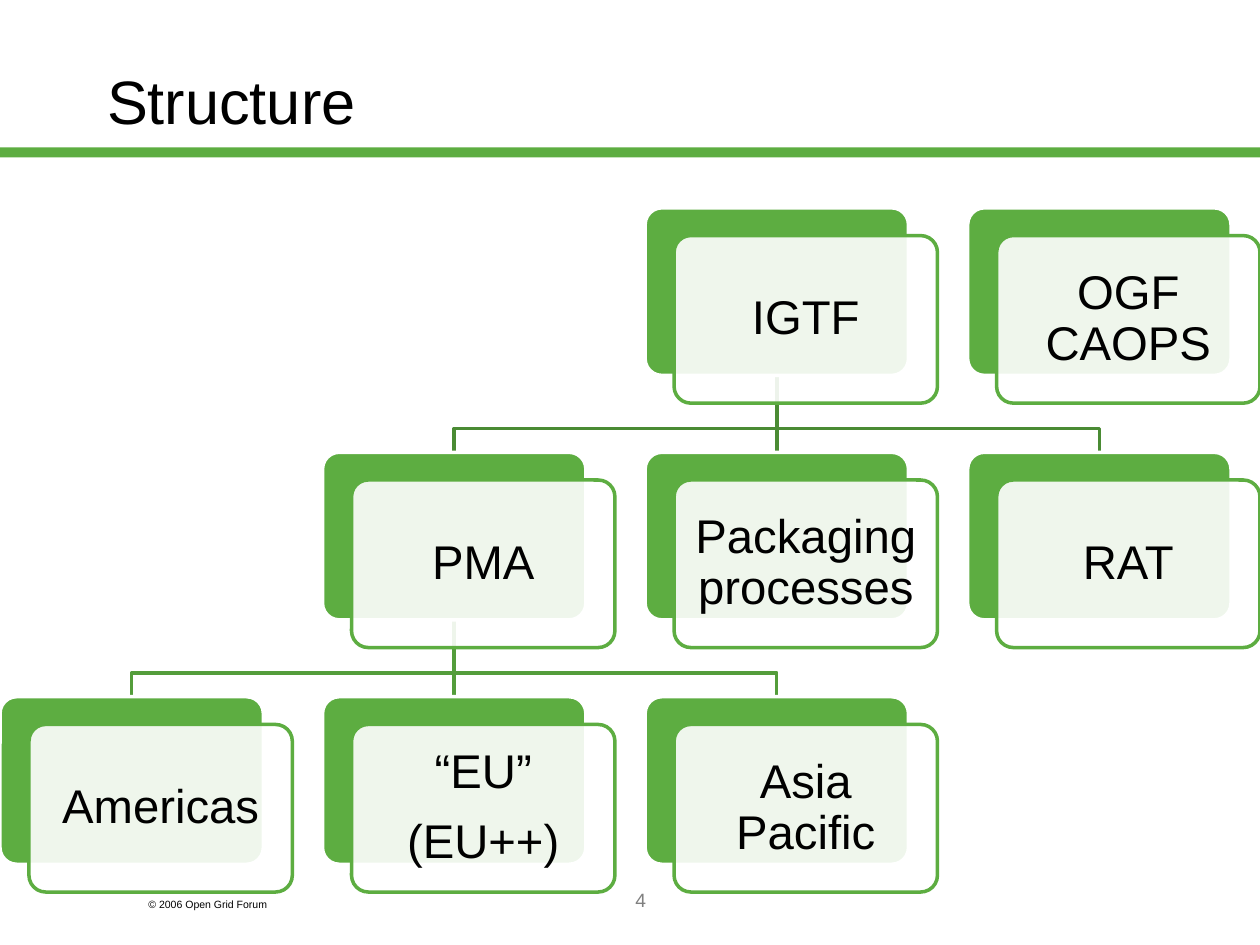
from dataclasses import dataclass

from lxml.etree import SubElement
from pptx import Presentation
from pptx.dml.color import RGBColor
from pptx.enum.shapes import MSO_CONNECTOR, MSO_SHAPE
from pptx.enum.text import MSO_ANCHOR, PP_ALIGN
from pptx.oxml.ns import qn
from pptx.shapes.autoshape import Shape
from pptx.slide import Slide
from pptx.text.text import TextFrame
from pptx.util import Inches, Pt


@dataclass(frozen=True)
class Theme:
    font: str = "Arial"
    green: str = "5DAD41"
    links: tuple[str, str] = ("4A8B34", "549D3B")
    white: str = "FFFFFF"
    black: str = "000000"
    gray: str = "808080"
    title: int = 35
    card: int = 27
    number: int = 11
    notice: int = 6
    line: int = 2


@dataclass(frozen=True)
class Card:
    text: str
    col: int
    row: int

    @property
    def left(self) -> float:
        return self.col * COL_STEP

    @property
    def top(self) -> float:
        return TOP + self.row * ROW_STEP

    @property
    def mid(self) -> float:
        return self.left + WIDTH / 2


THEME = Theme()
WIDTH, HEIGHT = 2.09, 1.33
COL_STEP, ROW_STEP, TOP = 2.56, 1.94, 1.65
SHIFT_X, SHIFT_Y = 0.23, 0.22
DROP = 0.42

IGTF = Card("IGTF", 2, 0)
CAOPS = Card("OGF CAOPS", 3, 0)
PMA = Card("PMA", 1, 1)
PACK = Card("Packaging processes", 2, 1)
RAT = Card("RAT", 3, 1)
AMERICAS = Card("Americas", 0, 2)
EU = Card("“EU”\n(EU++)", 1, 2)
ASIA = Card("Asia Pacific", 2, 2)
CARDS = [IGTF, CAOPS, PMA, PACK, RAT, AMERICAS, EU, ASIA]
TREE = [(IGTF, [RAT, PACK, PMA]), (PMA, [ASIA, EU, AMERICAS])]


def style(frame: TextFrame, size: int, color: str, align: PP_ALIGN) -> None:
    for para in frame.paragraphs:
        para.alignment = align
        for run in para.runs:
            run.font.name = THEME.font
            run.font.size = Pt(size)
            run.font.color.rgb = RGBColor.from_string(color)


def add_label(slide: Slide, text: str, box: tuple[float, ...], size: int,
              color: str, align: PP_ALIGN) -> None:
    frame = slide.shapes.add_textbox(*map(Inches, box)).text_frame
    frame.word_wrap = True
    frame.text = text
    style(frame, size, color, align)


def add_link(slide: Slide, start: Card, end: Card) -> None:
    """Join two cards by a straight line, or by an elbow across columns."""
    top = start.top + HEIGHT
    if start.col == end.col:
        ends = (start.mid, top, end.mid, end.top)
        link = slide.shapes.add_connector(
            MSO_CONNECTOR.STRAIGHT, *map(Inches, ends))
        SubElement(link._element.spPr, qn("a:effectLst"))
    else:
        bend = top + DROP
        points = [(start.mid, bend), (end.mid, bend), (end.mid, end.top)]
        path = slide.shapes.build_freeform(Inches(start.mid), Inches(top))
        path.add_line_segments(
            [(Inches(x), Inches(y)) for x, y in points], close=False)
        link = path.convert_to_shape()
        link.fill.background()
        link.shadow.inherit = False
    link.line.color.rgb = RGBColor.from_string(THEME.links[start.row])
    link.line.width = Pt(THEME.line)


def add_panel(slide: Slide, left: float, top: float, fill: str,
              line: str) -> Shape:
    box = (left, top, WIDTH, HEIGHT)
    panel = slide.shapes.add_shape(
        MSO_SHAPE.ROUNDED_RECTANGLE, *map(Inches, box))
    panel.adjustments[0] = 0.1
    panel.shadow.inherit = False
    panel.fill.solid()
    panel.fill.fore_color.rgb = RGBColor.from_string(fill)
    panel.line.color.rgb = RGBColor.from_string(line)
    panel.line.width = Pt(THEME.line)
    return panel


def add_card(slide: Slide, card: Card) -> None:
    add_panel(slide, card.left, card.top, THEME.green, THEME.white)
    front = add_panel(slide, card.left + SHIFT_X, card.top + SHIFT_Y,
                      THEME.white, THEME.green)
    color = front._element.spPr.find(qn("a:solidFill"))[0]
    SubElement(color, qn("a:alpha"), val="90000")

    frame = front.text_frame
    frame.word_wrap = True
    frame.vertical_anchor = MSO_ANCHOR.MIDDLE
    frame.margin_left = frame.margin_right = Inches(0.07)
    frame.margin_top = frame.margin_bottom = Inches(0.07)
    frame.text = card.text
    style(frame, THEME.card, THEME.black, PP_ALIGN.CENTER)
    for para in frame.paragraphs:
        para.line_spacing = 0.9
        para.space_after = Pt(11)


def add_title(slide: Slide, text: str) -> None:
    title = slide.shapes.title
    title.left, title.top = Inches(0.75), Inches(0.17)
    title.width, title.height = Inches(8.5), Inches(1.25)
    title.text_frame.text = text
    title.text_frame.vertical_anchor = MSO_ANCHOR.MIDDLE
    style(title.text_frame, THEME.title, THEME.black, PP_ALIGN.LEFT)


def add_rule(slide: Slide) -> None:
    box = (0, 1.17, 10, 0.08)
    rule = slide.shapes.add_shape(MSO_SHAPE.RECTANGLE, *map(Inches, box))
    rule.shadow.inherit = False
    rule.fill.solid()
    rule.fill.fore_color.rgb = RGBColor.from_string(THEME.green)
    rule.line.fill.background()


def main() -> None:
    deck = Presentation()
    deck.slide_width, deck.slide_height = Inches(10), Inches(7.5)
    slide = deck.slides.add_slide(deck.slide_layouts[5])
    add_rule(slide)
    add_label(slide, "© 2006 Open Grid Forum", (1.08, 7.08, 1.5, 0.2),
              THEME.notice, THEME.black, PP_ALIGN.LEFT)
    add_title(slide, "Structure")
    for parent, children in TREE:
        for child in children:
            add_link(slide, parent, child)
    for card in CARDS:
        add_card(slide, card)
    add_label(slide, "4", (2.17, 7, 5.83, 0.5),
              THEME.number, THEME.gray, PP_ALIGN.CENTER)
    deck.save("out.pptx")


if __name__ == "__main__":
    main()
